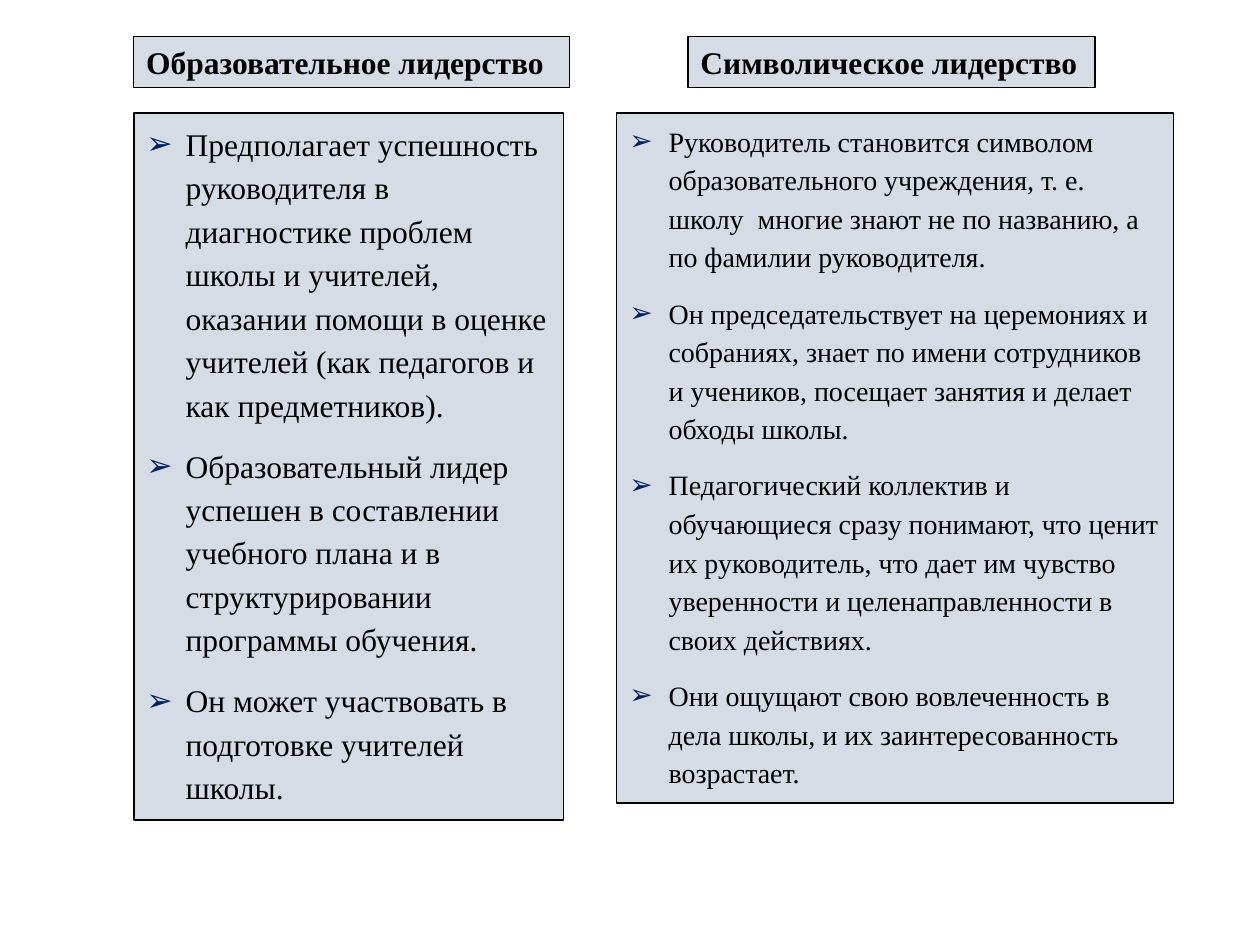
from lxml.etree import SubElement
from pptx import Presentation
from pptx.dml.color import RGBColor
from pptx.enum.text import MSO_AUTO_SIZE as AutoSize
from pptx.oxml.ns import qn
from pptx.util import Pt

FONT = "Times New Roman"
BLACK = RGBColor(0x00, 0x00, 0x00)
PANEL = RGBColor(0xD6, 0xDC, 0xE5)
NAVY = RGBColor(0x00, 0x20, 0x60)
BULLET, INDENT = "➢", 22.5

HEADING_TOP, HEADING_HEIGHT = 20.9, 29.1
BODY_TOP = 64.6

# Content: one entry per column, geometry in points
COLUMNS = [
    {
        "heading": "Образовательное лидерство",
        "heading_span": (76.5, 249),
        "body_area": (76.5, 245.5, 404),
        "size": 18,
        "items": [
            "Предполагает успешность руководителя в диагностике проблем школы и учителей, "
            "оказании помощи в оценке учителей (как педагогов и как предметников).",
            "Образовательный лидер успешен в составлении учебного плана и в "
            "структурировании программы обучения.",
            "Он может участвовать в подготовке учителей школы.",
        ],
    },
    {
        "heading": "Символическое лидерство",
        "heading_span": (393.2, 232.5),
        "body_area": (352.5, 318.2, 394.3),
        "size": 16,
        "items": [
            "Руководитель становится символом образовательного учреждения, т. е. "
            "школу  многие знают не по названию, а по фамилии руководителя.",
            "Он председательствует на церемониях и собраниях, знает по имени сотрудников "
            "и учеников, посещает занятия и делает обходы школы.",
            "Педагогический коллектив и обучающиеся сразу понимают, что ценит их "
            "руководитель, что дает им чувство уверенности и целенаправленности в своих "
            "действиях.",
            "Они ощущают свою вовлеченность в дела школы, и их заинтересованность "
            "возрастает.",
        ],
    },
]


def add_bullet(para):
    props = para._p.get_or_add_pPr()
    props.set("marL", str(Pt(INDENT)))
    props.set("indent", str(-Pt(INDENT)))
    color = SubElement(props, qn("a:buClr"))
    SubElement(color, qn("a:srgbClr"), val=str(NAVY))
    SubElement(props, qn("a:buFont"), typeface="Arial")
    SubElement(props, qn("a:buChar"), char=BULLET)


def add_panel(page, area, texts, size, bold=False, bulleted=False):
    box = page.shapes.add_textbox(*map(Pt, area))
    box.fill.solid()
    box.fill.fore_color.rgb = PANEL
    box.line.color.rgb = BLACK
    box.line.width = Pt(0.75)
    frame = box.text_frame
    frame.word_wrap = True
    frame.auto_size = AutoSize.SHAPE_TO_FIT_TEXT
    for index, text in enumerate(texts):
        para = frame.paragraphs[0] if index == 0 else frame.add_paragraph()
        if bulleted:
            para.line_spacing = 1.15
            para.space_after = Pt(10)
            add_bullet(para)
        span = para.add_run()
        span.text = text
        for name, value in {"name": FONT, "size": Pt(size), "bold": bold}.items():
            setattr(span.font, name, value)
        span.font.color.rgb = BLACK


deck = Presentation()
deck.slide_width, deck.slide_height = Pt(720), Pt(540)
page = deck.slides.add_slide(deck.slide_layouts[6])

# Heading and bulleted panel of each column
for column in COLUMNS:
    left, width = column["heading_span"]
    add_panel(page, (left, HEADING_TOP, width, HEADING_HEIGHT),
              [column["heading"]], 18, bold=True)
    left, width, height = column["body_area"]
    add_panel(page, (left, BODY_TOP, width, height),
              column["items"], column["size"], bulleted=True)

deck.save("out.pptx")
